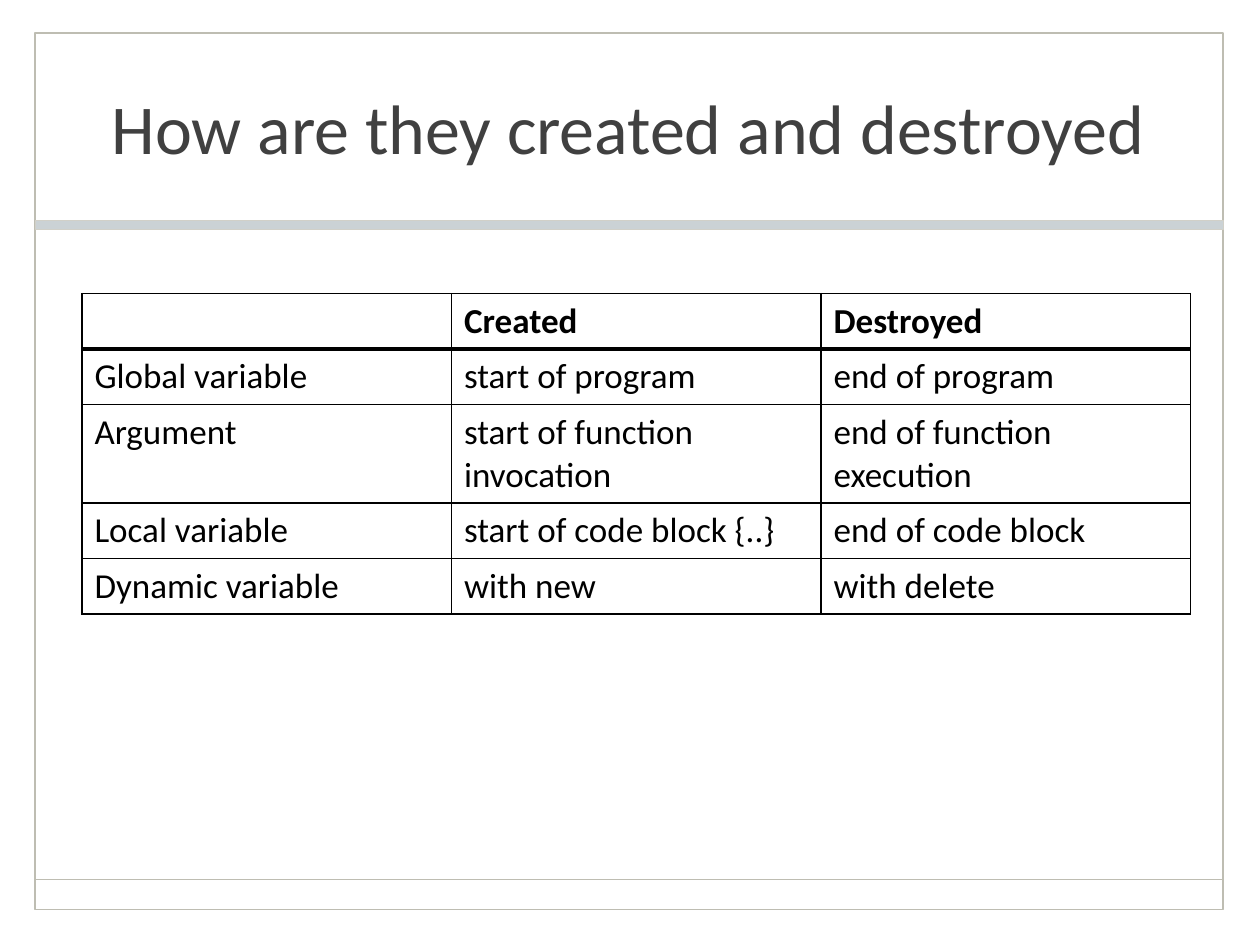
from pptx import Presentation
from pptx.dml.color import RGBColor
from pptx.enum.shapes import MSO_CONNECTOR, MSO_SHAPE
from pptx.enum.text import MSO_ANCHOR, MSO_AUTO_SIZE, PP_ALIGN
from pptx.oxml.ns import qn
from pptx.util import Inches, Pt
from lxml import etree

RECT = MSO_SHAPE.RECTANGLE
STRAIGHT = MSO_CONNECTOR.STRAIGHT
MIDDLE = MSO_ANCHOR.MIDDLE
NO_FIT = MSO_AUTO_SIZE.NONE
CENTER = PP_ALIGN.CENTER

COLS, ROWS = 100, 75  # grid cells of 0.1 inch
TITLE_ONLY = 5


def rgb(color):
    return RGBColor.from_string(color)


class Deck:
    """Holds the style and the current slide; lengths are grid columns and rows."""
    font = "Calibri"
    title_color, text_color = "404040", "000000"
    rule_color, band_color, band_edge = "BEBDB2", "CBD2D5", "D1D0C8"
    cell_color, border_color = "FFFFFF", "000000"
    title_size, table_size = 40, 20

    def __init__(self):
        self.prs = Presentation()
        self.prs.slide_width, self.prs.slide_height = Inches(10), Inches(7.5)
        self.s = self.prs.slides.add_slide(self.prs.slide_layouts[TITLE_ONLY])

    def x(self, cols):
        return round(self.prs.slide_width * cols / COLS)

    def y(self, rows):
        return round(self.prs.slide_height * rows / ROWS)

    def box(self, left, top, width, height):
        return self.x(left), self.y(top), self.x(width), self.y(height)

    def run(self, p, text, size, color, bold=False):
        r = p.add_run()
        r.text = text
        r.font.name, r.font.size, r.font.bold = self.font, Pt(size), bold
        r.font.color.rgb = rgb(color)

    def title(self, text, *place):
        sp = self.s.shapes.title
        sp.left, sp.top, sp.width, sp.height = self.box(*place)
        tf = sp.text_frame
        tf.word_wrap, tf.auto_size, tf.vertical_anchor = True, NO_FIT, MIDDLE
        tf.paragraphs[0].alignment = CENTER
        self.run(tf.paragraphs[0], text, self.title_size, self.title_color)

    def rect(self, *place, line, weight, fill=None):
        sp = self.s.shapes.add_shape(RECT, *self.box(*place))
        sp.shadow.inherit = False
        if fill:
            sp.fill.solid()
            sp.fill.fore_color.rgb = rgb(fill)
        else:
            sp.fill.background()
        sp.line.color.rgb, sp.line.width = rgb(line), Pt(weight)

    def rule(self, left, top, width):
        ln = self.s.shapes.add_connector(
            STRAIGHT, self.x(left), self.y(top), self.x(left + width), self.y(top))
        ln.line.color.rgb, ln.line.width = rgb(self.rule_color), Pt(1)
        etree.SubElement(ln._element.spPr, qn("a:effectLst"))

    def border(self, cell, side, weight):
        ln = etree.SubElement(cell._tc.get_or_add_tcPr(), qn("a:ln" + side),
                              w=str(Pt(weight)))
        fill = etree.SubElement(ln, qn("a:solidFill"))
        etree.SubElement(fill, qn("a:srgbClr"), val=self.border_color)

    def table(self, data, left, top, width, row_height):
        """Draws a grid with a bold first row and a thick rule under it."""
        place = self.box(left, top, width, row_height * len(data))
        table = self.s.shapes.add_table(len(data), len(data[0]), *place).table
        for i, row in enumerate(data):
            for j, text in enumerate(row):
                cell = table.cell(i, j)
                for side in "LRTB":
                    thick = (i, side) in ((0, "B"), (1, "T"))
                    self.border(cell, side, 3 if thick else 1)
                cell.fill.solid()
                cell.fill.fore_color.rgb = rgb(self.cell_color)
                if text:
                    self.run(cell.text_frame.paragraphs[0], text,
                             self.table_size, self.text_color, bold=i == 0)


def main():
    deck = Deck()
    left, width = 2.8, 94.3
    deck.rect(left, 2.6, width, 69.6, line=deck.rule_color, weight=1)
    deck.rule(left, 69.8, width)
    deck.rect(left, 17.5, width, 0.7, line=deck.band_edge, weight=0.25,
              fill=deck.band_color)
    deck.title("How are they created and destroyed", 5.2, 2.7, 89.3, 14.7)
    deck.table([
        ("", "Created", "Destroyed"),
        ("Global variable", "start of program", "end of program"),
        ("Argument", "start of function invocation", "end of function execution"),
        ("Local variable", "start of code block {..}", "end of code block"),
        ("Dynamic variable", "with new", "with delete"),
    ], 6.5, 23.3, 88, 4.1)
    deck.prs.save("out.pptx")


if __name__ == "__main__":
    main()
